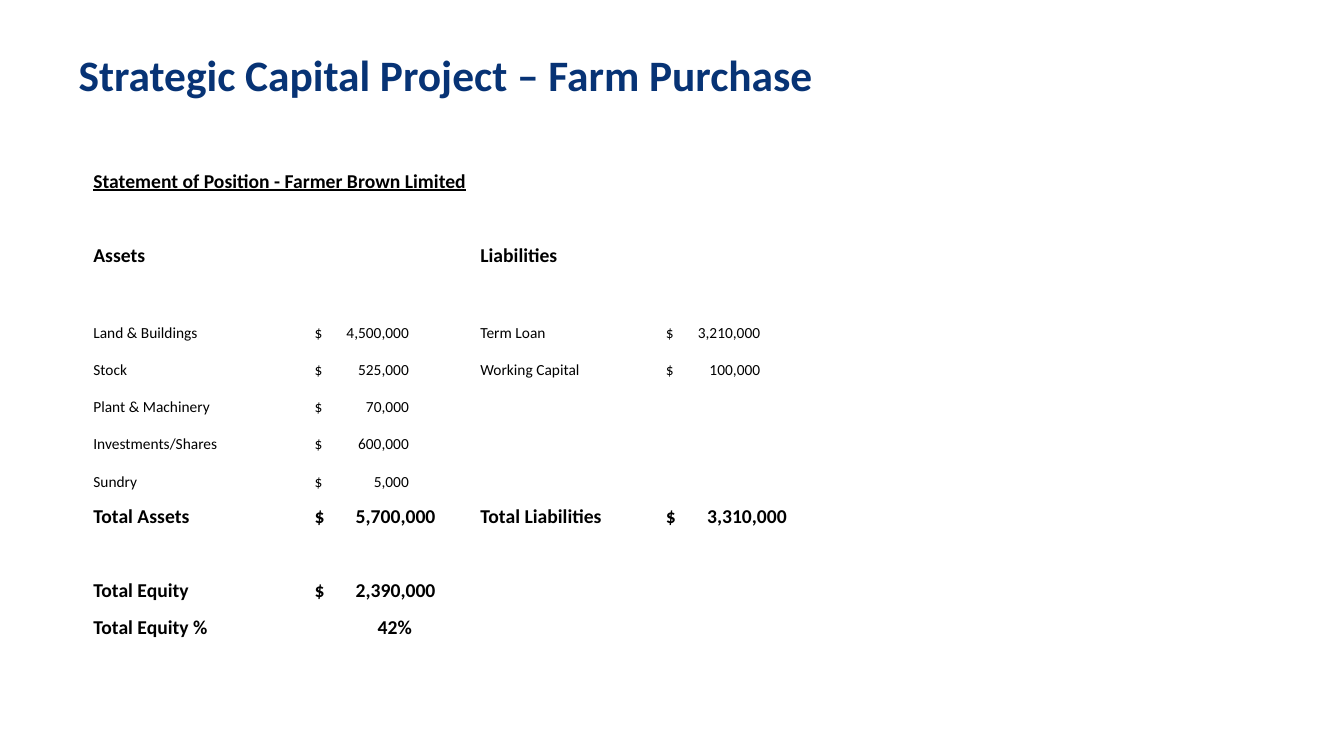
from pptx import Presentation
from pptx.dml.color import RGBColor
from pptx.enum.text import MSO_ANCHOR, MSO_AUTO_SIZE, PP_ALIGN
from pptx.oxml.ns import qn
from pptx.util import Pt
from lxml.etree import SubElement


def color(code):
    return RGBColor.from_string(code)


class Page:
    face, ink, navy, paper = "Calibri", "000000", "073375", "FFFFFF"
    big, small = 14, 11
    stops = {14: 86.5, 11: 67.5}  # right edge of the amounts, by text size

    def __init__(self, deck):
        self.slide = deck.slides.add_slide(deck.slide_layouts[5])

    def style(self, para, size, hue, bold, line=False):
        for run in para.runs:
            font = run.font
            font.name, font.size = self.face, Pt(size)
            font.bold, font.underline = bold, line
            font.color.rgb = color(hue)

    def title(self, text, left, top, width, height):
        shape = self.slide.shapes.title
        shape.left, shape.top = Pt(left), Pt(top)
        shape.width, shape.height = Pt(width), Pt(height)
        frame = shape.text_frame
        frame.text = text
        frame.auto_size = MSO_AUTO_SIZE.NONE
        frame.vertical_anchor = MSO_ANCHOR.TOP
        frame.margin_top = Pt(2.5)
        para = frame.paragraphs[0]
        para.alignment = PP_ALIGN.LEFT
        self.style(para, 31, self.navy, True)

    def tab(self, para, place):
        tabs = SubElement(para._p.get_or_add_pPr(), qn("a:tabLst"))
        SubElement(tabs, qn("a:tab"), pos=str(Pt(place)), algn="r")

    def cell(self, cell, text, size, line):
        money = text.startswith("$")
        cell.fill.solid()
        cell.fill.fore_color.rgb = color(self.paper)
        cell.vertical_anchor = MSO_ANCHOR.BOTTOM
        cell.margin_left = Pt(3.2 if money else 0.7)
        cell.margin_right = cell.margin_top = Pt(0.7)
        cell.margin_bottom = 0
        if not text:
            return
        cell.text_frame.text = text
        para = cell.text_frame.paragraphs[0]
        if money:
            self.tab(para, self.stops[size])
        elif text.endswith("%") and text[0].isdigit():
            para.alignment = PP_ALIGN.CENTER
        self.style(para, size, self.ink, size == self.big, line)

    def table(self, rows, left, top, widths, step):
        table = self.slide.shapes.add_table(
            len(rows), len(widths), Pt(left), Pt(top),
            Pt(sum(widths)), Pt(step * len(rows))).table
        table.first_row = table.horz_banding = False
        for col, width in zip(table.columns, widths):
            col.width = Pt(width)
        for r, (size, *texts) in enumerate(rows):
            table.rows[r].height = Pt(step)
            texts += [""] * (len(widths) - len(texts))
            for c, text in enumerate(texts):
                self.cell(table.cell(r, c), text, size, r == 0)
        table.cell(0, 0).merge(table.cell(0, len(widths) - 1))


def main():
    deck = Presentation()
    deck.slide_width, deck.slide_height = Pt(960), Pt(540)
    page = Page(deck)
    big, small = page.big, page.small

    # Heading
    page.title("Strategic Capital Project – Farm Purchase", 49, 31.7, 595.5, 79)

    # Statement: text size, then assets and liabilities
    rows = [
        (big, "Statement of Position - Farmer Brown Limited"),
        (big,),
        (big, "Assets", "", "Liabilities"),
        (big,),
        (small, "Land & Buildings", "$\t4,500,000", "Term Loan", "$\t3,210,000"),
        (small, "Stock", "$\t525,000", "Working Capital", "$\t100,000"),
        (small, "Plant & Machinery", "$\t70,000"),
        (small, "Investments/Shares", "$\t600,000"),
        (small, "Sundry", "$\t5,000"),
        (big, "Total Assets", "$\t5,700,000", "Total Liabilities", "$\t3,310,000"),
        (big,),
        (big, "Total Equity", "$\t2,390,000"),
        (big, "Total Equity %", "42%"),
    ]
    page.table(rows, 66, 111.6, [155.5, 121, 130, 121], 26.6)

    deck.save("out.pptx")


if __name__ == "__main__":
    main()
